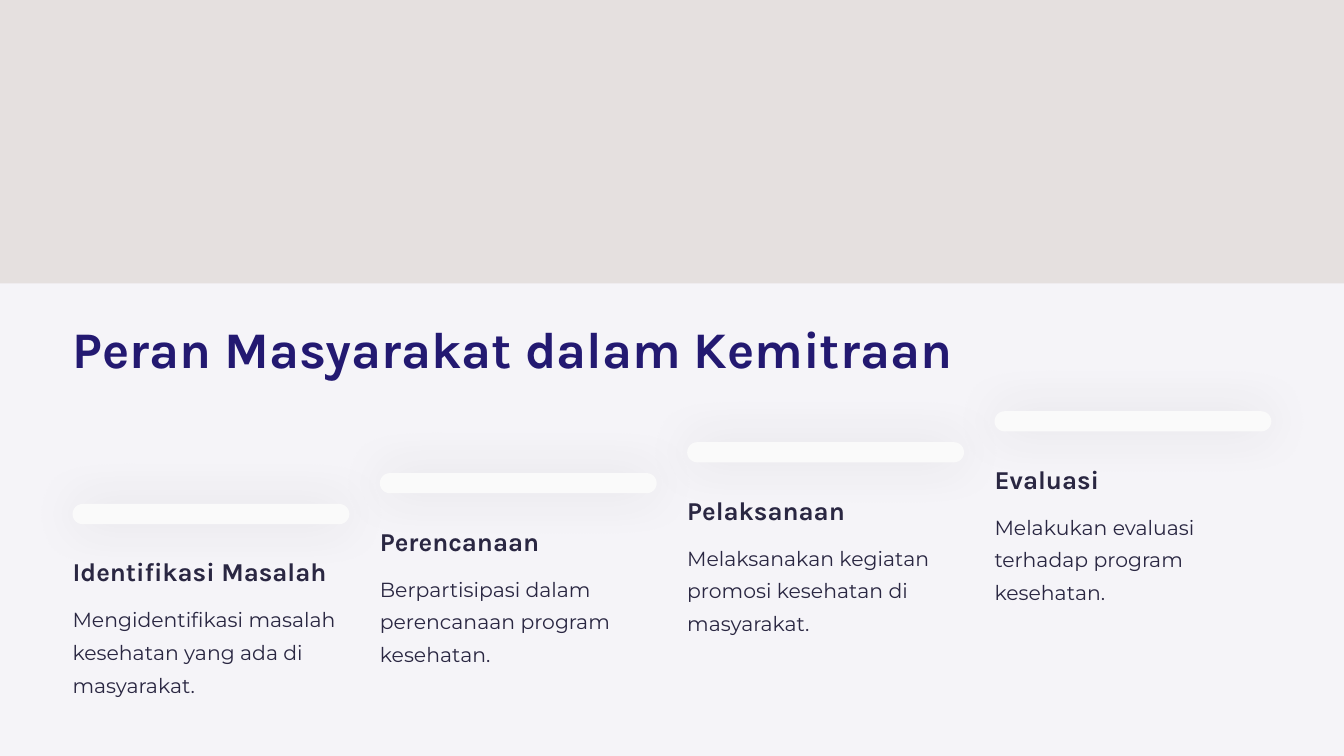
from lxml import etree
from pptx import Presentation
from pptx.dml.color import RGBColor
from pptx.enum.shapes import MSO_SHAPE
from pptx.enum.text import MSO_ANCHOR, MSO_AUTO_SIZE, PP_ALIGN
from pptx.oxml.ns import qn
from pptx.util import Inches, Pt

RECTANGLE = MSO_SHAPE.RECTANGLE
ROUNDED = MSO_SHAPE.ROUNDED_RECTANGLE
TOP = MSO_ANCHOR.TOP
LEFT = PP_ALIGN.LEFT
NO_AUTOFIT = MSO_AUTO_SIZE.NONE

LAVENDER = RGBColor(0xF5, 0xF4, 0xF8)
BANNER = RGBColor(0xE5, 0xE0, 0xDF)
NEAR_WHITE = RGBColor(0xFA, 0xFA, 0xFA)
INDIGO = RGBColor(0x23, 0x19, 0x71)
INK = RGBColor(0x2A, 0x27, 0x42)
SHADOW = RGBColor(0x33, 0x33, 0x33)

HEADING_FONT = "Karla"
BODY_FONT = "Montserrat"

SLIDE_WIDTH = 10
SLIDE_HEIGHT = SLIDE_WIDTH * 9 / 16
BANNER_HEIGHT = SLIDE_HEIGHT * 3 / 8
MARGIN = 0.54
STEP_WIDTH = 2.06
FIRST_STEP_TOP = 3.75
STEP_RISE = 0.23

STEPS = [
    ("Identifikasi Masalah", "Mengidentifikasi masalah kesehatan yang ada di masyarakat."),
    ("Perencanaan", "Berpartisipasi dalam perencanaan program kesehatan."),
    ("Pelaksanaan", "Melaksanakan kegiatan promosi kesehatan di masyarakat."),
    ("Evaluasi", "Melakukan evaluasi terhadap program kesehatan."),
]


class SlideBuilder:
    def __init__(self, slide):
        self.slide = slide
        background = slide.background.fill
        background.solid()
        background.fore_color.rgb = LAVENDER

    def block(self, kind, left, top, width, height, color):
        block = self.slide.shapes.add_shape(
            kind, Inches(left), Inches(top), Inches(width), Inches(height)
        )
        block.shadow.inherit = False
        block.fill.solid()
        block.fill.fore_color.rgb = color
        block.line.fill.background()
        return block

    def glowing_bar(self, left, top, width, height):
        bar = self.block(ROUNDED, left, top, width, height, NEAR_WHITE)
        bar.adjustments[0] = 0.9
        effects = bar.element.spPr.find(qn("a:effectLst"))
        glow = etree.SubElement(
            effects, qn("a:outerShdw"), blurRad=str(Pt(26.5)), dist="0", dir="0",
            algn="bl", rotWithShape="0",
        )
        tint = etree.SubElement(glow, qn("a:srgbClr"), val=str(SHADOW))
        etree.SubElement(tint, qn("a:alpha"), val="10000")

    def text(self, wording, left, top, width, height, font, size, spacing, color,
             bold=False, wrap=False):
        box = self.slide.shapes.add_textbox(
            Inches(left), Inches(top), Inches(width), Inches(height)
        )
        frame = box.text_frame
        frame.margin_left = frame.margin_right = 0
        frame.margin_top = frame.margin_bottom = 0
        frame.word_wrap = wrap
        frame.auto_size = NO_AUTOFIT
        frame.vertical_anchor = TOP
        frame.text = wording
        paragraph = frame.paragraphs[0]
        paragraph.alignment = LEFT
        paragraph.line_spacing = Pt(spacing)
        style = paragraph.runs[0].font
        style.name = font
        style.size = Pt(size)
        style.bold = bold
        style.color.rgb = color

    def step(self, heading, description, left, top):
        self.glowing_bar(left, top, STEP_WIDTH, 0.15)
        self.text(heading, left, top + 0.38, 1.92, 0.24,
                  HEADING_FONT, 13.8, 17.2, INK, bold=True)
        self.text(description, left, top + 0.71, STEP_WIDTH, 0.74,
                  BODY_FONT, 10.9, 17.5, INK, wrap=True)


def main():
    presentation = Presentation()
    presentation.slide_width = Inches(SLIDE_WIDTH)
    presentation.slide_height = Inches(SLIDE_HEIGHT)
    builder = SlideBuilder(presentation.slides.add_slide(presentation.slide_layouts[6]))

    builder.block(RECTANGLE, 0, 0, SLIDE_WIDTH, BANNER_HEIGHT, BANNER)
    builder.text("Peran Masyarakat dalam Kemitraan", MARGIN, 2.34, 5.95, 0.48,
                 HEADING_FONT, 27.5, 34.4, INDIGO, bold=True)

    pitch = (SLIDE_WIDTH - 2 * MARGIN - STEP_WIDTH) / (len(STEPS) - 1)
    for index, (heading, description) in enumerate(STEPS):
        builder.step(heading, description, MARGIN + index * pitch,
                     FIRST_STEP_TOP - index * STEP_RISE)

    presentation.save("out.pptx")


if __name__ == "__main__":
    main()
